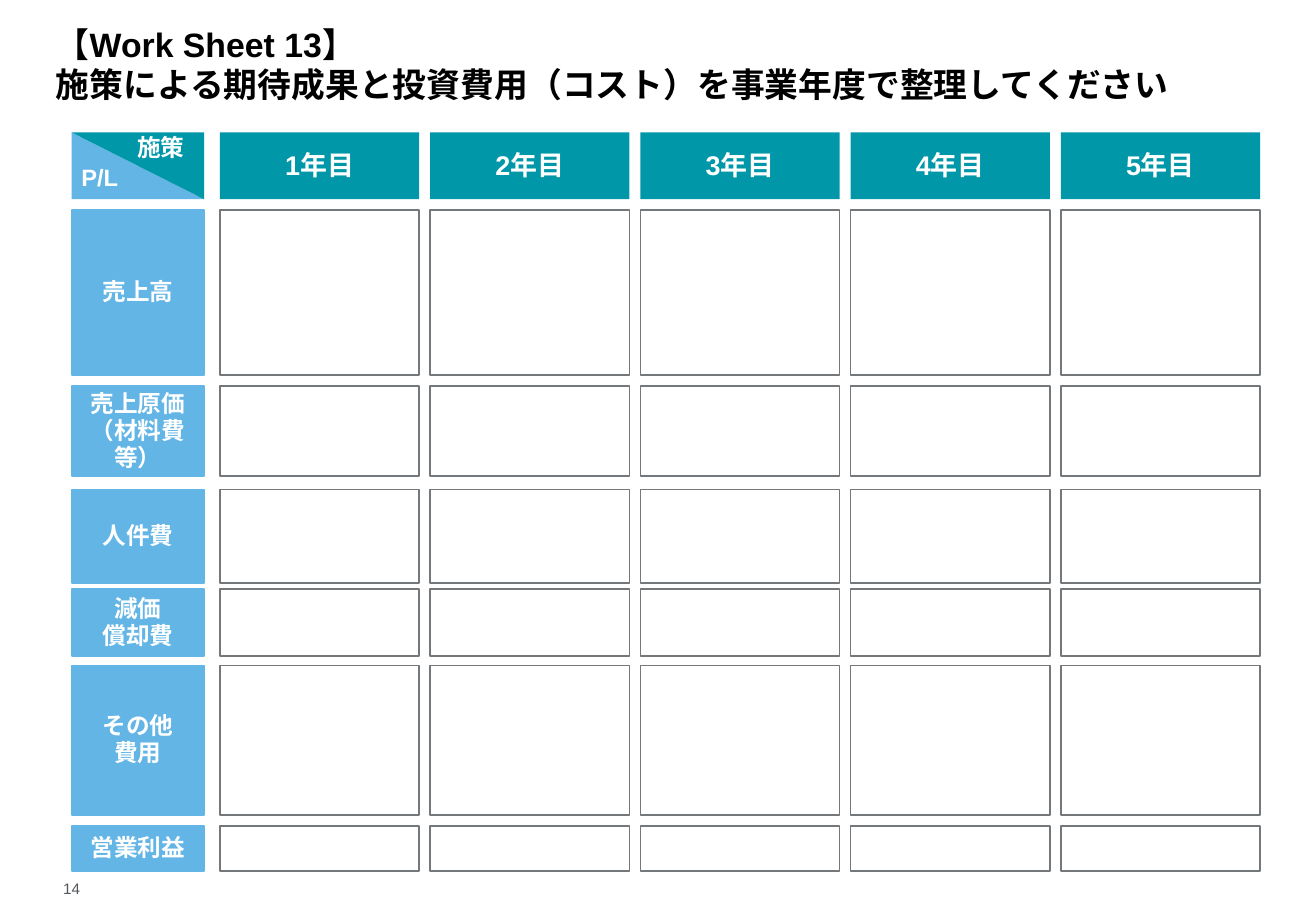
"""Build the five-year worksheet of expected results and investment costs."""
from typing import NamedTuple, Optional

from pptx import Presentation
from pptx import util as u
from pptx.dml.color import RGBColor
from pptx.enum import lang, shapes, text

EMU_PER_PX = 9144
COLOURS = {
    "teal": "0097A9",
    "sky": "62B5E5",
    "white": "FFFFFF",
    "grey": "75787B",
    "black": "000000",
    "footer": "53565A",
}


class Box(NamedTuple):
    left: int
    top: int
    width: int
    height: int


class Row(NamedTuple):
    label: str
    top: int
    height: int


ROWS = [
    Row("売上高", 173, 136),
    Row("売上原価\n（材料費等）", 318, 74),
    Row("人件費", 403, 77),
    Row("減価\n償却費", 485, 55),
    Row("その他\n費用", 548, 123),
    Row("営業利益", 680, 37),
]
YEARS = 5
HEADER_TOP, HEADER_HEIGHT = 109, 55
LABEL_LEFT, LABEL_WIDTH = 59, 109
YEAR_LEFT, YEAR_WIDTH, YEAR_STEP = 181, 164, 173


def px(length: int) -> u.Emu:
    """Turn whole pixels into EMU."""
    return u.Emu(length * EMU_PER_PX)


def colour(name: str) -> RGBColor:
    """Look up a named colour."""
    return RGBColor.from_string(COLOURS[name])


def write(shape, content: str, *, size: int, ink: str = "white", bold: bool = True,
          align=text.PP_ALIGN.LEFT, anchor=text.MSO_ANCHOR.TOP,
          inset: int = 0, wrap: bool = True, spacing: float = 1.0) -> None:
    """Fill a shape with formatted text, one paragraph per line."""
    frame = shape.text_frame
    frame.word_wrap = wrap
    frame.vertical_anchor = anchor
    frame.margin_left = frame.margin_right = px(inset)
    frame.margin_top = frame.margin_bottom = px(inset)
    frame.text = content
    for paragraph in frame.paragraphs:
        paragraph.alignment = align
        paragraph.line_spacing = spacing
        for run in paragraph.runs:
            run.font.name = "Arial"
            run.font.size = u.Pt(size)
            run.font.bold = bold
            run.font.color.rgb = colour(ink)
            run.font.language_id = lang.MSO_LANGUAGE_ID.JAPANESE


def add_text_box(slide, box: Box):
    """Add an empty text box."""
    return slide.shapes.add_textbox(*map(px, box))


def add_block(slide, box: Box, fill: str, line: Optional[str] = None,
              preset=shapes.MSO_SHAPE.RECTANGLE):
    """Add a flat filled shape with an optional outline."""
    block = slide.shapes.add_shape(preset, *map(px, box))
    block.shadow.inherit = False
    block.fill.solid()
    block.fill.fore_color.rgb = colour(fill)
    if line:
        block.line.color.rgb = colour(line)
        block.line.width = u.Pt(1)
    else:
        block.line.fill.background()
    return block


def add_heading(slide, box: Box, content: str, size: int, fill: str,
                line: Optional[str] = None) -> None:
    """Add a block with a centred heading."""
    write(add_block(slide, box, fill, line), content, size=size, spacing=0.95,
          align=text.PP_ALIGN.CENTER, anchor=text.MSO_ANCHOR.MIDDLE)


def add_corner(slide) -> None:
    """Add the diagonally split corner with its two axis names."""
    corner = Box(LABEL_LEFT, HEADER_TOP, LABEL_WIDTH, HEADER_HEIGHT)
    for fill, rotation in (("sky", 0), ("teal", 180)):
        half = add_block(slide, corner, fill, preset=shapes.MSO_SHAPE.RIGHT_TRIANGLE)
        half.rotation = rotation
    for name, box in (("施策", Box(108, 106, 50, 32)), ("P/L", Box(62, 131, 41, 32))):
        write(add_text_box(slide, box), name, size=14, inset=5, wrap=False, spacing=0.95)


def add_grid(slide) -> None:
    """Add the row labels, year headings and empty entry cells."""
    for row in ROWS:
        add_heading(slide, Box(LABEL_LEFT, row.top, LABEL_WIDTH, row.height),
                    row.label, 14, "sky", "sky")
    for year in range(YEARS):
        left = YEAR_LEFT + year * YEAR_STEP
        add_heading(slide, Box(left, HEADER_TOP, YEAR_WIDTH, HEADER_HEIGHT),
                    f"{year + 1}年目", 16, "teal")
        for row in ROWS:
            add_block(slide, Box(left, row.top, YEAR_WIDTH, row.height), "white", "grey")


def main() -> None:
    """Create and save the worksheet."""
    deck = Presentation()
    deck.slide_width, deck.slide_height = px(1083), px(750)
    slide = deck.slides.add_slide(deck.slide_layouts[6])
    write(add_text_box(slide, Box(46, 15, 992, 71)),
          "【Work Sheet 13】\v施策による期待成果と投資費用（コスト）を事業年度で整理してください",
          size=20, ink="black", anchor=text.MSO_ANCHOR.BOTTOM)
    write(add_text_box(slide, Box(46, 720, 20, 19)), "14", size=9, ink="footer",
          bold=False, align=text.PP_ALIGN.RIGHT, anchor=text.MSO_ANCHOR.BOTTOM, wrap=False)
    add_corner(slide)
    add_grid(slide)
    deck.save("out.pptx")


if __name__ == "__main__":
    main()
